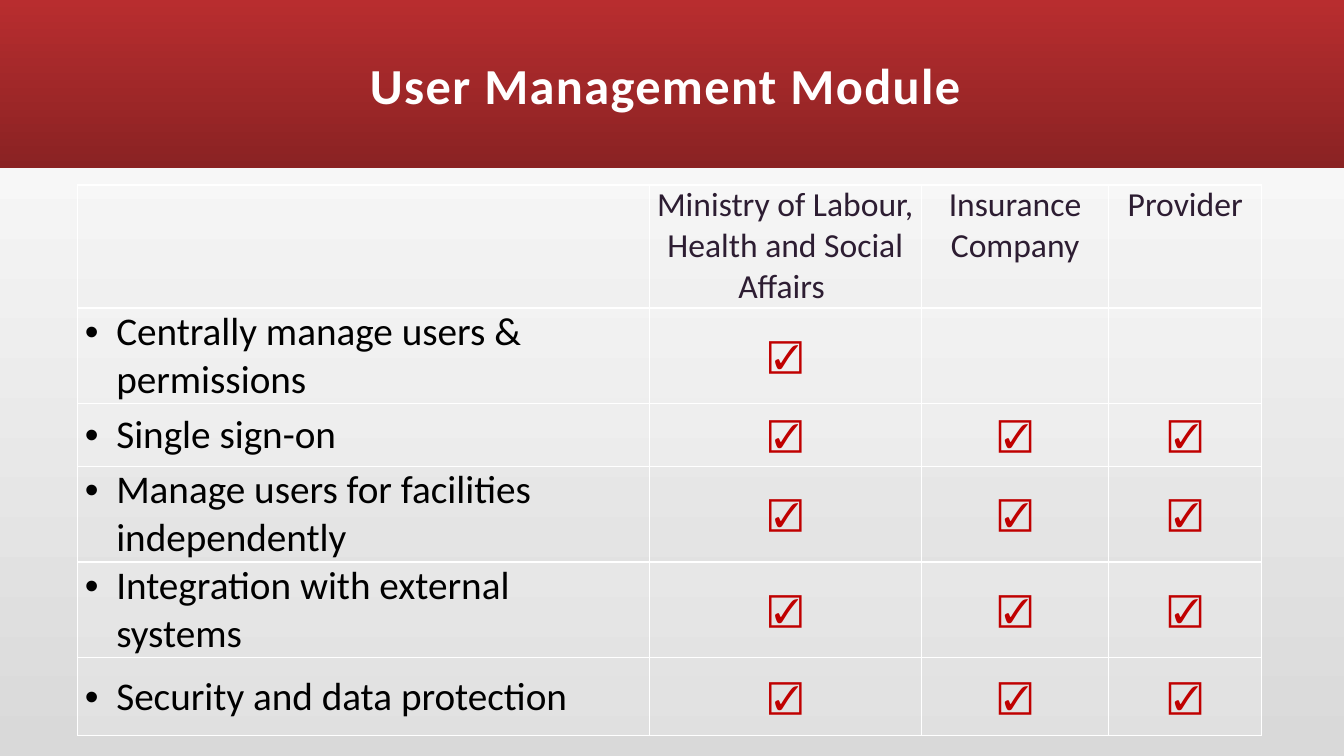
import pptx
import pptx.util
import pptx.dml.color
import pptx.enum.shapes
import pptx.enum.text
import pptx.oxml
import pptx.oxml.ns

Cm, Pt = pptx.util.Cm, pptx.util.Pt
ALIGN = pptx.enum.text.PP_ALIGN
ANCHOR = pptx.enum.text.MSO_ANCHOR

# Content
TITLE = "User Management Module "
ROLES = ["Ministry of Labour, Health and Social Affairs ", "Insurance Company", "Provider"]
FEATURES = [  # feature, roles that have it, font of the tick, tinted row
    ("Centrally manage users & permissions", 1, "Arial", True),
    ("Single sign-on", 3, "Arial", True),
    ("Manage users for facilities independently", 3, "Arial", False),
    ("Integration with external systems", 3, "Arial", True),
    ("Security and data protection", 3, "Cabin", True),
]
TICK = "☑"

COLORS = {
    "white": "FFFFFF", "black": "000000", "header": "2D1D32", "tick": "C00000",
    "banner_top": "B82D2F", "banner_bottom": "8A2223", "page_bottom": "D9D9D9",
}

# Layout, in cm
PAGE_W, PAGE_H, BANNER_H = 33.87, 19.05, 4.24
TITLE_W = 27.94
TABLE_X, TABLE_Y = 1.96, 4.66
COL_W = [14.4, 6.86, 4.72, 3.86]
ROW_H = [2.95, 2.29, 1.57, 2.29, 2.29, 1.96]
INSET, INDENT = 0.18, 0.79


def rgb(name):
    return pptx.dml.color.RGBColor.from_string(COLORS[name])


def set_gradient(fill, start, end, angle):
    fill.gradient()
    fill.gradient_angle = angle
    for stop, name in zip(fill.gradient_stops, (start, end)):
        stop.color.rgb = rgb(name)


def format_run(r, size, color, font="Calibri", spacing=0):
    r.font.size = Pt(size)
    r.font.name = font
    r.font.color.rgb = rgb(color)
    r._r.get_or_add_rPr().set("spc", str(spacing * 100))


def write_cell(cell, text, size, color, font="Calibri", spacing=0):
    cell.margin_left = cell.margin_right = Cm(INSET)
    cell.margin_top = cell.margin_bottom = 0
    cell.text_frame.text = text
    p = cell.text_frame.paragraphs[0]
    p.alignment = ALIGN.CENTER
    format_run(p.runs[0], size, color, font, spacing)
    return p


def add_bullet(p):
    p.alignment = ALIGN.LEFT
    p.space_before = Pt(12)
    pPr = p._p.get_or_add_pPr()
    pPr.set("marL", str(Cm(INDENT)))
    pPr.set("indent", str(-Cm(INDENT)))
    ns = pptx.oxml.ns.nsdecls("a")
    pPr.append(pptx.oxml.parse_xml(f'<a:buFont {ns} typeface="Arial"/>'))
    pPr.append(pptx.oxml.parse_xml(f'<a:buChar {ns} char="•"/>'))


def set_borders(cell, top, bottom):
    tcPr = cell._tc.get_or_add_tcPr()
    for side, width in (("L", 1), ("R", 1), ("T", top), ("B", bottom)):
        tcPr.append(pptx.oxml.parse_xml(
            f'<a:ln{side} {pptx.oxml.ns.nsdecls("a")} w="{Pt(width)}"><a:solidFill>'
            f'<a:srgbClr val="{COLORS["white"]}"/></a:solidFill></a:ln{side}>'))


def set_cell_fill(cell, tinted):
    if not tinted:
        cell.fill.background()
        return
    cell.fill.solid()
    cell.fill.fore_color.rgb = rgb("white")
    clr = cell._tc.tcPr.find(pptx.oxml.ns.qn("a:solidFill"))[0]
    clr.append(pptx.oxml.parse_xml(
        f'<a:alpha {pptx.oxml.ns.nsdecls("a")} val="20000"/>'))


prs = pptx.Presentation()
prs.slide_width, prs.slide_height = Cm(PAGE_W), Cm(PAGE_H)
s = prs.slides.add_slide(prs.slide_layouts[5])
set_gradient(s.background.fill, "page_bottom", "white", 90)

# Banner, behind the title
banner = s.shapes.add_shape(
    pptx.enum.shapes.MSO_SHAPE.RECTANGLE, 0, 0, Cm(PAGE_W), Cm(BANNER_H))
banner.shadow.inherit = False
banner.line.fill.background()
set_gradient(banner.fill, "banner_top", "banner_bottom", 270)
s.shapes._spTree.insert(2, banner._element)

# Title
title = s.shapes.title
title.left, title.top = Cm((PAGE_W - TITLE_W) / 2), 0
title.width, title.height = Cm(TITLE_W), Cm(BANNER_H)
tf = title.text_frame
tf.text = TITLE
tf.word_wrap = True
tf.auto_size = pptx.enum.text.MSO_AUTO_SIZE.NONE
tf.vertical_anchor = ANCHOR.MIDDLE
p = tf.paragraphs[0]
p.alignment = ALIGN.CENTER
format_run(p.runs[0], 36, "white", spacing=1)
p.runs[0].font.bold = True

# Table grid
table = s.shapes.add_table(
    len(ROW_H), len(COL_W), Cm(TABLE_X), Cm(TABLE_Y), Cm(sum(COL_W)), Cm(sum(ROW_H))).table
table.first_row = table.horz_banding = False
for col, width in zip(table.columns, COL_W):
    col.width = Cm(width)
tints = [False] + [tinted for *_, tinted in FEATURES]
for i, (row, height) in enumerate(zip(table.rows, ROW_H)):
    row.height = Cm(height)
    for cell in row.cells:
        set_borders(cell, 2 if i == 1 else 1, 2 if i == 0 else 1)
        set_cell_fill(cell, tints[i])

# Header row
for j, role in enumerate(ROLES, 1):
    write_cell(table.cell(0, j), role, 24, "header")

# Feature rows
for i, (feature, count, font, _) in enumerate(FEATURES, 1):
    add_bullet(write_cell(table.cell(i, 0), feature, 28, "black"))
    for j in range(1, count + 1):
        write_cell(table.cell(i, j), TICK, 24, "tick", font, 1)
    for j in range(count + 1):
        table.cell(i, j).vertical_anchor = ANCHOR.MIDDLE

prs.save("out.pptx")
